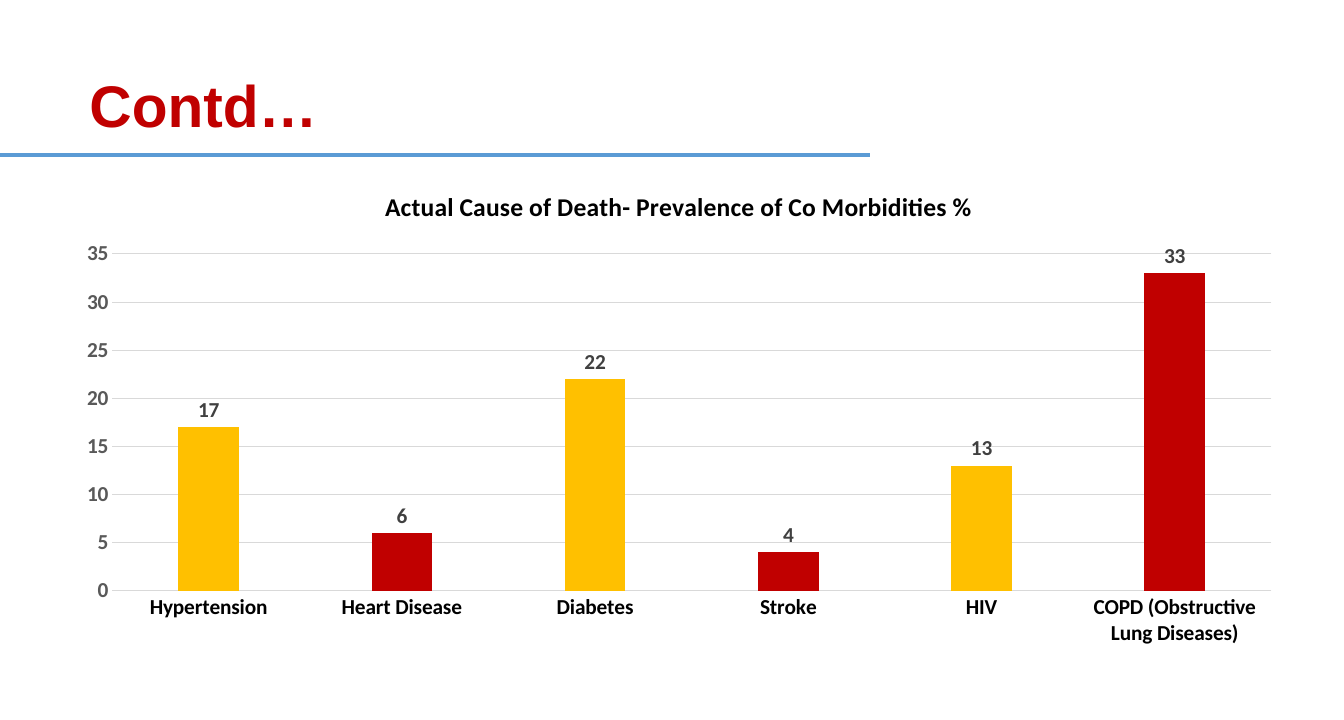
from lxml.etree import SubElement
from pptx import Presentation
from pptx.chart.data import CategoryChartData
from pptx.dml.color import RGBColor
from pptx.enum.chart import XL_CHART_TYPE, XL_LABEL_POSITION, XL_TICK_MARK
from pptx.enum.shapes import MSO_CONNECTOR
from pptx.enum.text import MSO_ANCHOR, PP_ALIGN
from pptx.oxml.ns import qn
from pptx.util import Cm, Pt

RED, AMBER, BLUE = "C00000", "FFC000", "5B9BD5"
BLACK, GREY, DARK, PALE = "000000", "595959", "404040", "D9D9D9"

CAUSES = {
    "Hypertension": 17,
    "Heart Disease": 6,
    "Diabetes": 22,
    "Stroke": 4,
    "HIV": 13,
    "COPD (Obstructive Lung Diseases)": 33,
}


def rgb(value):
    return RGBColor.from_string(value)


def set_all(obj, values):
    for name, value in values.items():
        setattr(obj, name, value)


def style_font(font, color, size, name="Calibri"):
    set_all(font, {"name": name, "size": Pt(size), "bold": True})
    font.color.rgb = rgb(color)


def style_line(line, color, width):
    line.color.rgb = rgb(color)
    line.width = Pt(width)


def add_heading(slide, text, left, top, width, height):
    sp = slide.shapes.title
    set_all(sp, {"left": left, "top": top, "width": width, "height": height})
    tf = sp.text_frame
    set_all(tf, {"word_wrap": False, "vertical_anchor": MSO_ANCHOR.MIDDLE})
    p = tf.paragraphs[0]
    set_all(p, {"alignment": PP_ALIGN.RIGHT, "line_spacing": 1.0})
    r = p.add_run()
    r.text = text
    style_font(r.font, RED, 44, "Arial")


def add_rule(slide, left, top, width):
    line = slide.shapes.add_connector(
        MSO_CONNECTOR.STRAIGHT, left, top, left + width, top)
    style_line(line.line, BLUE, 3)
    SubElement(line._element.spPr, qn("a:effectLst"))


def style_axes(chart):
    cat, val = chart.category_axis, chart.value_axis
    for axis, color in ((cat, BLACK), (val, GREY)):
        set_all(axis, {"major_tick_mark": XL_TICK_MARK.NONE,
                       "minor_tick_mark": XL_TICK_MARK.NONE})
        style_font(axis.tick_labels.font, color, 16)
    style_line(cat.format.line, PALE, 0.75)
    set_all(val, {"minimum_scale": 0, "maximum_scale": 35, "major_unit": 5,
                  "has_major_gridlines": True})
    set_all(val.tick_labels, {"number_format": "0",
                              "number_format_is_linked": False})
    val.format.line.fill.background()
    style_line(val.major_gridlines.format.line, PALE, 0.75)


def style_columns(plot):
    set_all(plot, {"gap_width": 219, "overlap": -27,
                   "vary_by_categories": False, "has_data_labels": True})
    labels = plot.data_labels
    set_all(labels, {"show_value": True, "number_format": "0",
                     "number_format_is_linked": False,
                     "position": XL_LABEL_POSITION.OUTSIDE_END})
    style_font(labels.font, DARK, 16)
    series = plot.series[0]
    series.format.fill.solid()
    series.format.fill.fore_color.rgb = rgb(RED)
    for i in range(0, len(CAUSES), 2):
        fill = series.points[i].format.fill
        fill.solid()
        fill.fore_color.rgb = rgb(AMBER)


def add_cause_chart(slide, title, left, top, width, height):
    data = CategoryChartData()
    data.categories = CAUSES.keys()
    data.add_series("Series 1", CAUSES.values())
    chart = slide.shapes.add_chart(
        XL_CHART_TYPE.COLUMN_CLUSTERED, left, top, width, height, data).chart
    style_font(chart.font, BLACK, 16)
    set_all(chart, {"has_legend": False, "has_title": True})
    tf = chart.chart_title.text_frame
    tf.text = title
    style_font(tf.paragraphs[0].runs[0].font, BLACK, 19.2)
    chart.chart_title.include_in_layout = False
    style_axes(chart)
    style_columns(chart.plots[0])


def main():
    prs = Presentation()
    set_all(prs, {"slide_width": Cm(35.56), "slide_height": Cm(19.05)})
    s = prs.slides.add_slide(prs.slide_layouts[5])
    add_cause_chart(s, "Actual Cause of Death- Prevalence of Co Morbidities %",
                    Cm(1.65), Cm(4.47), Cm(32.64), Cm(12.9))
    add_heading(s, "Contd…", Cm(2.06), Cm(1.68), Cm(6.6), Cm(2.13))
    add_rule(s, Cm(0), Cm(4.11), Cm(23.01))
    prs.save("out.pptx")


if __name__ == "__main__":
    main()
